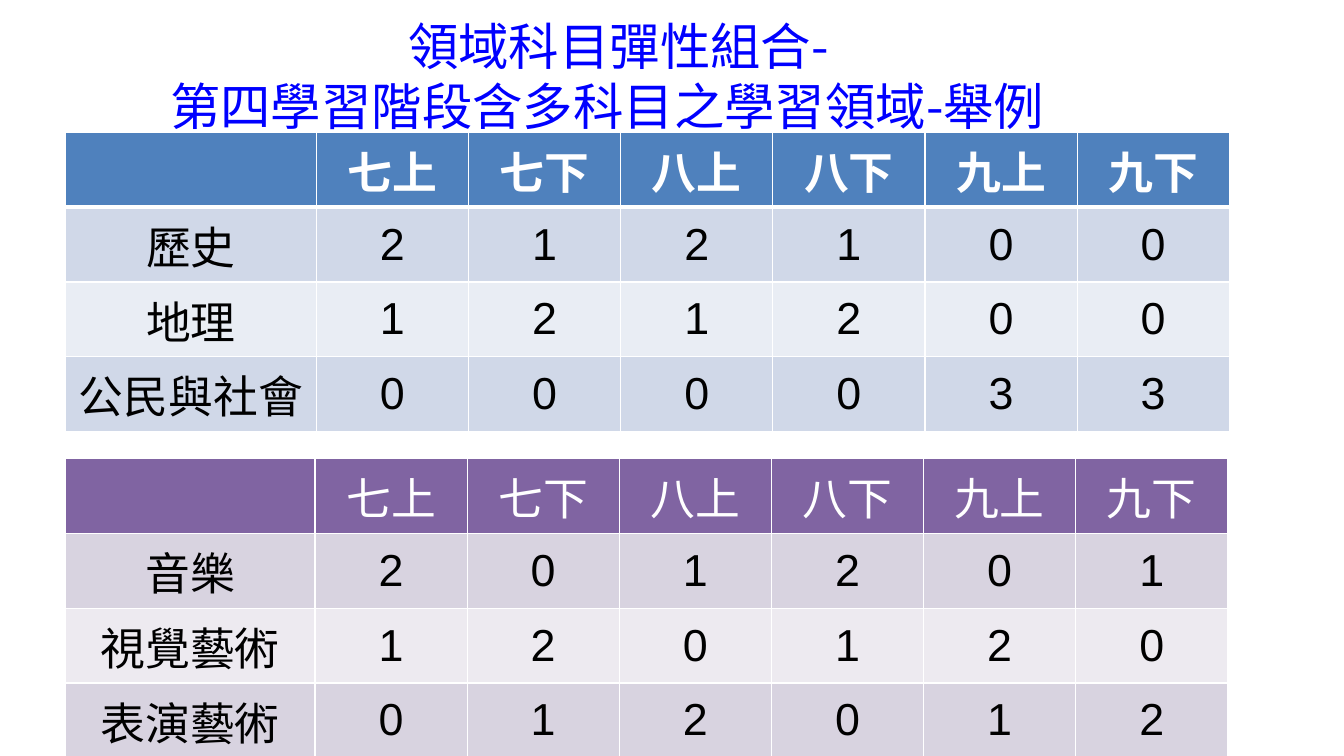
from dataclasses import dataclass

from lxml.etree import SubElement
from pptx import Presentation
from pptx.dml.color import RGBColor
from pptx.enum.text import MSO_ANCHOR, PP_ALIGN
from pptx.oxml.ns import qn
from pptx.slide import Slide
from pptx.table import _Cell
from pptx.text.text import _Paragraph
from pptx.util import Pt

COLORS = {
    "title": "0000FF",
    "white": "FFFFFF",
    "black": "000000",
    "blue": "4F81BD",
    "blue_dark_band": "D0D8E8",
    "blue_light_band": "E9EDF4",
    "purple": "8064A2",
    "purple_dark_band": "D8D3E0",
    "purple_light_band": "EDEAF0",
}
SEMESTERS = ("", "七上", "七下", "八上", "八下", "九上", "九下")
TITLE_LINES = (("領域科目彈性組合-", 0), ("第四學習階段含多科目之學習領域-舉例", 16))
TABLE_LEFT = 46.8
SEMESTER_WIDTH = 108.7
ROW_HEIGHT = 53.5


@dataclass(frozen=True)
class HoursTable:
    top: float
    label_width: float
    theme: str
    header_bold: bool
    header_rule: float
    subjects: tuple[tuple[str, str], ...]


TABLES = (
    HoursTable(94.4, 179.2, "blue", True, 3,
               (("歷史", "212100"), ("地理", "121200"), ("公民與社會", "000033"))),
    HoursTable(327.4, 178.2, "purple", False, 1,
               (("音樂", "201201"), ("視覺藝術", "120120"), ("表演藝術", "012012"))),
)


def write_text(paragraph: _Paragraph, text: str, color: str, font_format: dict) -> None:
    paragraph.alignment = PP_ALIGN.CENTER
    paragraph.text = text
    for name, value in font_format.items():
        setattr(paragraph.font, name, value)
    paragraph.font.color.rgb = RGBColor.from_string(COLORS[color])


def add_borders(cell: _Cell, widths: dict[str, float]) -> None:
    properties = cell._tc.get_or_add_tcPr()
    for side, width in widths.items():
        line = SubElement(properties, qn(f"a:{side}"), w=str(Pt(width)))
        fill = SubElement(line, qn("a:solidFill"))
        SubElement(fill, qn("a:srgbClr"), val=COLORS["white"])


def add_title(slide: Slide) -> None:
    text_box = slide.shapes.add_textbox(Pt(94.3), Pt(13), Pt(694.8), Pt(81.4))
    frame = text_box.text_frame
    frame_format = {"word_wrap": True, "vertical_anchor": MSO_ANCHOR.MIDDLE,
                    "margin_top": 0, "margin_bottom": 0}
    for name, value in frame_format.items():
        setattr(frame, name, value)
    for index, (text, right_indent) in enumerate(TITLE_LINES):
        paragraph = frame.add_paragraph() if index else frame.paragraphs[0]
        write_text(paragraph, text, "title", {"name": "Noto Sans CJK SC", "size": Pt(36)})
        paragraph._p.get_or_add_pPr().set("marR", str(Pt(right_indent)))


def add_hours_table(slide: Slide, hours: HoursTable) -> None:
    rows = [SEMESTERS] + [(subject, *values) for subject, values in hours.subjects]
    widths = [hours.label_width] + [SEMESTER_WIDTH] * (len(SEMESTERS) - 1)
    table = slide.shapes.add_table(
        len(rows), len(widths), Pt(TABLE_LEFT), Pt(hours.top),
        Pt(sum(widths)), Pt(ROW_HEIGHT * len(rows))).table
    for column, width in zip(table.columns, widths):
        column.width = Pt(width)
    for row_index, row in enumerate(rows):
        is_header = row_index == 0
        band = "_dark_band" if row_index % 2 else "_light_band"
        fill = hours.theme if is_header else hours.theme + band
        font_format = {"name": "Arial", "size": Pt(32),
                       "bold": is_header and hours.header_bold}
        borders = {"lnL": 1, "lnR": 1,
                   "lnT": hours.header_rule if row_index == 1 else 1,
                   "lnB": hours.header_rule if is_header else 1}
        for column_index, text in enumerate(row):
            cell = table.cell(row_index, column_index)
            cell.vertical_anchor = MSO_ANCHOR.MIDDLE if text.isdigit() else MSO_ANCHOR.TOP
            add_borders(cell, borders)
            cell.fill.solid()
            cell.fill.fore_color.rgb = RGBColor.from_string(COLORS[fill])
            write_text(cell.text_frame.paragraphs[0], text,
                       "white" if is_header else "black", font_format)


def main() -> None:
    presentation = Presentation()
    presentation.slide_width = Pt(960)
    presentation.slide_height = Pt(540)
    slide = presentation.slides.add_slide(presentation.slide_layouts[6])
    add_title(slide)
    for hours in TABLES:
        add_hours_table(slide, hours)
    presentation.save("out.pptx")


if __name__ == "__main__":
    main()
